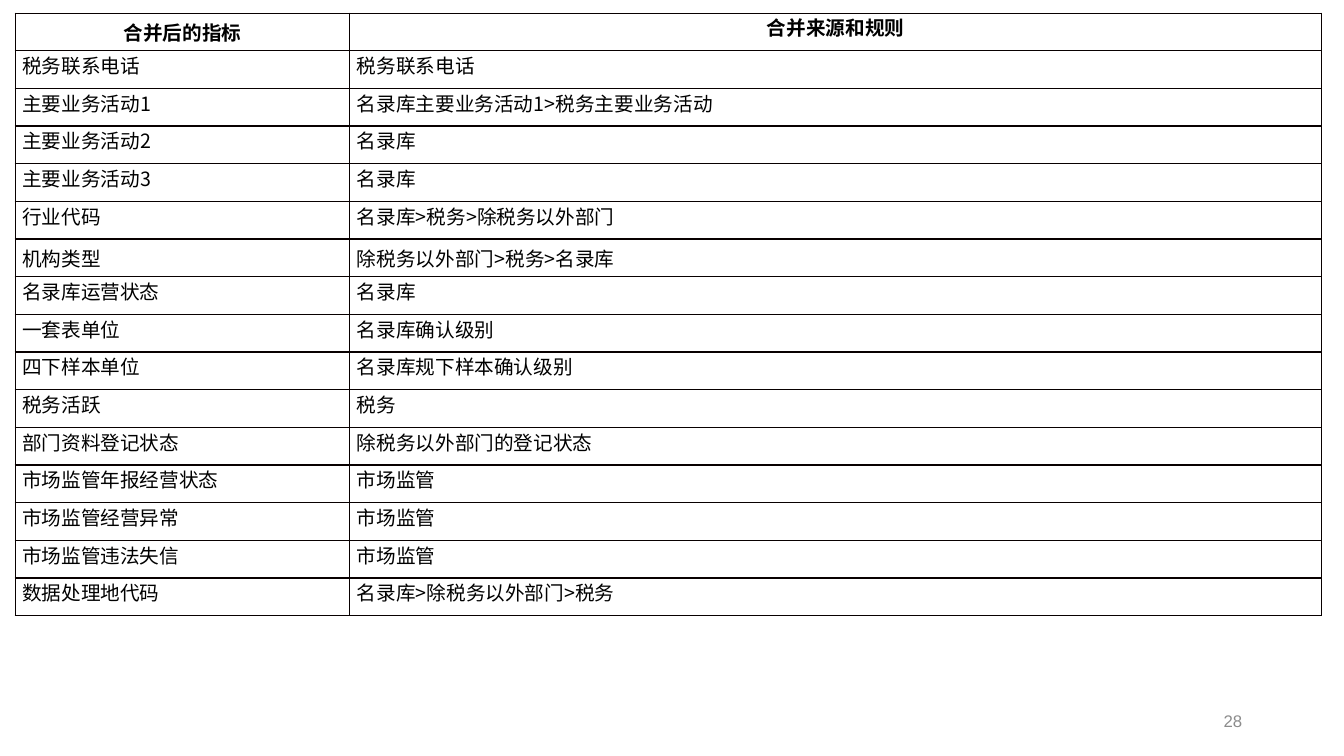
from dataclasses import dataclass

from lxml.etree import SubElement
from pptx import Presentation
from pptx.dml.color import RGBColor
from pptx.enum.text import MSO_ANCHOR as Anchor, PP_ALIGN as Align
from pptx.oxml import parse_xml
from pptx.oxml.ns import nsdecls, qn
from pptx.util import Inches, Pt


@dataclass(frozen=True)
class Theme:
    ink: str = "000000"
    border: str = "080000"
    muted: str = "8C8C8C"
    table_font: str = "Noto Sans CJK SC"
    number_font: str = "Arial"
    table_size: int = 14
    number_size: int = 12
    border_width: int = 1


THEME = Theme()
ROW_HEIGHT = 5.98 / 16
COLUMN_WIDTHS = (3.32, 9.64)
CENTERED_INDICATOR = "机构类型"
HEADINGS = ("合并后的指标", "合并来源和规则")
RULES = (
    ("税务联系电话", "税务联系电话"),
    ("主要业务活动1", "名录库主要业务活动1>税务主要业务活动"),
    ("主要业务活动2", "名录库"),
    ("主要业务活动3", "名录库"),
    ("行业代码", "名录库>税务>除税务以外部门"),
    (CENTERED_INDICATOR, "除税务以外部门>税务>名录库"),
    ("名录库运营状态", "名录库"),
    ("一套表单位", "名录库确认级别"),
    ("四下样本单位", "名录库规下样本确认级别"),
    ("税务活跃", "税务"),
    ("部门资料登记状态", "除税务以外部门的登记状态"),
    ("市场监管年报经营状态", "市场监管"),
    ("市场监管经营异常", "市场监管"),
    ("市场监管违法失信", "市场监管"),
    ("数据处理地代码", "名录库>除税务以外部门>税务"),
)


def apply(target, settings):
    for key, value in settings.items():
        setattr(target, key, value)


def write(frame, wording, align, typeface, color, **font):
    paragraph = frame.paragraphs[0]
    paragraph.alignment = align
    run = paragraph.add_run()
    run.text = wording
    apply(run.font, {"name": typeface, **font})
    run.font.color.rgb = RGBColor.from_string(color)
    SubElement(run.font._element, qn("a:ea"), typeface=typeface)


def draw_borders(cell):
    properties = cell._tc.get_or_add_tcPr()
    for position, side in enumerate(("lnL", "lnR", "lnT", "lnB")):
        border = parse_xml(
            f'<a:{side} {nsdecls("a")} w="{Pt(THEME.border_width)}"><a:solidFill>'
            f'<a:srgbClr val="{THEME.border}"/></a:solidFill></a:{side}>'
        )
        properties.insert(position, border)


def fill_cell(cell, wording, heading, anchor):
    apply(cell, {
        "margin_left": Inches(0.07), "margin_right": Inches(0.07),
        "margin_top": 0, "margin_bottom": 0, "vertical_anchor": anchor,
    })
    cell.fill.background()
    draw_borders(cell)
    write(cell.text_frame, wording, Align.CENTER if heading else Align.LEFT,
          THEME.table_font, THEME.ink, size=Pt(THEME.table_size), bold=heading)


def add_rules_table(slide):
    entries = (HEADINGS, *RULES)
    table = slide.shapes.add_table(
        len(entries), len(HEADINGS), Inches(0.15), Inches(0.13),
        Inches(sum(COLUMN_WIDTHS)), Inches(ROW_HEIGHT * len(entries)),
    ).table
    apply(table, {"first_row": False, "horz_banding": False})
    for column, width in zip(table.columns, COLUMN_WIDTHS):
        column.width = Inches(width)
    for row, entry in enumerate(entries):
        table.rows[row].height = Inches(ROW_HEIGHT)
        for column, wording in enumerate(entry):
            centered = wording == HEADINGS[0] or entry[0] == CENTERED_INDICATOR
            fill_cell(table.cell(row, column), wording, row == 0,
                      Anchor.MIDDLE if centered else Anchor.TOP)


def add_page_number(slide, number):
    frame = slide.shapes.add_textbox(
        Inches(9.42), Inches(6.95), Inches(3), Inches(0.4)).text_frame
    apply(frame, {"word_wrap": True, "vertical_anchor": Anchor.MIDDLE})
    write(frame, number, Align.RIGHT, THEME.number_font, THEME.muted,
          size=Pt(THEME.number_size))


def main():
    deck = Presentation()
    apply(deck, {"slide_width": Inches(13.33), "slide_height": Inches(7.5)})
    slide = deck.slides.add_slide(deck.slide_layouts[6])
    add_page_number(slide, "28")
    add_rules_table(slide)
    deck.save("out.pptx")


if __name__ == "__main__":
    main()
